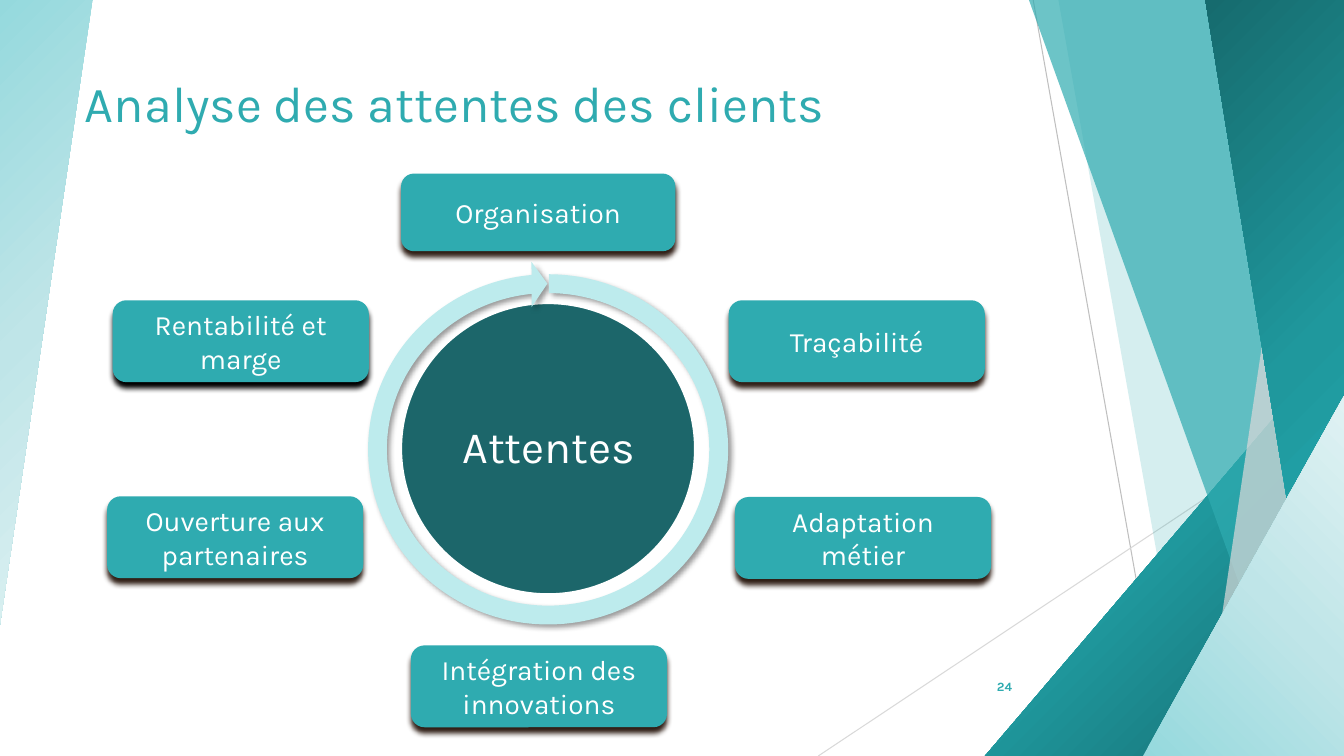
from lxml import etree
from pptx import Presentation
from pptx.dml.color import RGBColor
from pptx.enum.shapes import MSO_CONNECTOR, MSO_SHAPE
from pptx.enum.text import MSO_ANCHOR, PP_ALIGN
from pptx.oxml.ns import qn
from pptx.util import Pt

TEAL = RGBColor(0x2F, 0xAB, 0xB0)
DEEP_TEAL = RGBColor(0x1C, 0x66, 0x6A)
PALE_TEAL = RGBColor(0xBD, 0xEB, 0xED)
WARM_GREY = RGBColor(0xDC, 0xD9, 0xD9)
MID_GREY = RGBColor(0xBF, 0xBF, 0xBF)
LIGHT_GREY = RGBColor(0xD9, 0xD9, 0xD9)
WHITE = RGBColor(0xFF, 0xFF, 0xFF)
BROWN = RGBColor(0x32, 0x21, 0x18)
BLACK = RGBColor(0, 0, 0)
DARK_STOPS = [(0, RGBColor(0x16, 0x6B, 0x6E)), (50, RGBColor(0x1F, 0x98, 0x9D)),
              (100, RGBColor(0x25, 0xB4, 0xBA))]
LIGHT_STOPS = [(0, RGBColor(0x95, 0xD9, 0xDD)), (50, RGBColor(0xBF, 0xE5, 0xE8)),
               (100, RGBColor(0xE0, 0xF2, 0xF3))]

FONT = "Karla"
W, H = 960, 540
LEFT, CENTER, RIGHT = PP_ALIGN.LEFT, PP_ALIGN.CENTER, PP_ALIGN.RIGHT
TOP, MIDDLE = MSO_ANCHOR.TOP, MSO_ANCHOR.MIDDLE
ROUNDED, OVAL, BOX = MSO_SHAPE.ROUNDED_RECTANGLE, MSO_SHAPE.OVAL, MSO_SHAPE.RECTANGLE
TRIANGLE, RING = MSO_SHAPE.RIGHT_TRIANGLE, MSO_SHAPE.CIRCULAR_ARROW
TRIANGLE = MSO_SHAPE.ISOSCELES_TRIANGLE
STRAIGHT = MSO_CONNECTOR.STRAIGHT

TITLE = "Analyse des attentes des clients"
NUMBER = "24"
HUB = "Attentes"
# text, left, top, width, height, shadow colour
EXPECTATIONS = [
    ("Organisation", 286.5, 124, 196, 55.5, BROWN),
    ("Traçabilité", 520.5, 214.5, 183, 58.5, BROWN),
    ("Adaptation métier", 525, 355, 183, 58.5, BROWN),
    ("Intégration des innovations", 293.5, 461, 183, 58.5, BROWN),
    ("Ouverture aux partenaires", 76.5, 354.5, 183, 58.5, BROWN),
    ("Rentabilité et marge", 80.5, 214.5, 183, 58.5, BLACK),
]
# from x, from y, to x, to y, colour
THIN_LINES = [(738, 0, 834, H, MID_GREY), (W, 290, 584.5, H, LIGHT_GREY)]
# Panels run from a slanted left side (top x, bottom x) to the right slide edge;
# triangles are boxes with a rotation. Solid fill: colour, opacity.
# Gradient fill: stops, then an angle or the corner (l, t, r, b) it spreads from.
FACETS = [
    ("panel", (756, 852), (TEAL, 20)),
    ("triangle", (703.5, 240, 256.5, 300, 0), (DARK_STOPS, (100, 100, 0, 0))),
    ("panel", (735, 929.5), (TEAL, 70)),
    ("panel", (938, 858), (WARM_GREY, 70)),
    ("panel", (861, 949), (DARK_STOPS, (0, 0, 100, 100))),
    ("triangle", (816.5, 283, 143.5, 257, 0), (LIGHT_STOPS, 315)),
    ("triangle", (0, 0, 66, 446, 180), (LIGHT_STOPS, 225)),
]


def sub(parent, tag, **attrs):
    return etree.SubElement(parent, qn(tag), {k: str(v) for k, v in attrs.items()})


def paint(sp, color, opacity=100):
    """Flat fill without outline or shadow."""
    sp.shadow.inherit = False
    sp.fill.solid()
    sp.fill.fore_color.rgb = color
    sp.line.fill.background()
    if opacity < 100:
        rgb = sp.fill._xPr.find(qn("a:solidFill"))[0]
        sub(rgb, "a:alpha", val=opacity * 1000)


def paint_gradient(sp, stops, spread):
    paint(sp, stops[0][1])
    props = sp.element.spPr
    grad = etree.Element(qn("a:gradFill"), rotWithShape="1")
    stop_list = sub(grad, "a:gsLst")
    for pos, color in stops:
        sub(sub(stop_list, "a:gs", pos=pos * 1000), "a:srgbClr", val=color)
    if isinstance(spread, tuple):
        corner = {side: v * 1000 for side, v in zip("ltrb", spread)}
        sub(sub(grad, "a:path", path="circle"), "a:fillToRect", **corner)
    else:
        sub(grad, "a:lin", ang=spread * 60000, scaled=0)
    props.replace(props.find(qn("a:solidFill")), grad)


def cast_shadow(sp, color, opacity, blur, dist, angle):
    effects = sp.element.spPr.find(qn("a:effectLst"))
    outer = sub(effects, "a:outerShdw", blurRad=Pt(blur), dist=Pt(dist),
                dir=angle * 60000, rotWithShape=0)
    sub(sub(outer, "a:srgbClr", val=color), "a:alpha", val=opacity * 1000)


def write(sp, text, size, color, align=CENTER, anchor=MIDDLE, bold=False):
    tf = sp.text_frame
    tf.word_wrap = True
    tf.vertical_anchor = anchor
    p = tf.paragraphs[0]
    p.alignment = align
    r = p.add_run()
    r.text = text
    r.font.name, r.font.size, r.font.bold = FONT, Pt(size), bold
    r.font.color.rgb = color
    return tf


def add_shape(s, kind, x, y, w, h, color):
    sp = s.shapes.add_shape(kind, Pt(x), Pt(y), Pt(w), Pt(h))
    paint(sp, color)
    return sp


def add_facets(s):
    for x1, y1, x2, y2, color in THIN_LINES:
        line = s.shapes.add_connector(STRAIGHT, Pt(x1), Pt(y1), Pt(x2), Pt(y2))
        line.line.color.rgb = color
        line.line.width = Pt(0.75)
        sub(line.element.spPr, "a:effectLst")
    for kind, geometry, (fill, extra) in FACETS:
        if kind == "panel":
            top_x, bottom_x = geometry
            outline = s.shapes.build_freeform(Pt(top_x), 0)
            corners = [(W, 0), (W, H), (bottom_x, H)]
            outline.add_line_segments([(Pt(x), Pt(y)) for x, y in corners])
            sp = outline.convert_to_shape()
        else:
            *box, rotation = geometry
            sp = add_shape(s, TRIANGLE, *box, TEAL)
            sp.adjustments[0] = 1
            sp.rotation = rotation
        if isinstance(fill, list):
            paint_gradient(sp, fill, extra)
        else:
            paint(sp, fill, extra)


def add_hub(s):
    disc = add_shape(s, OVAL, 286.5, 216.5, 210, 208, DEEP_TEAL)
    disc.line.color.rgb = WHITE
    disc.line.width = Pt(1.5)
    label = add_shape(s, BOX, 320.5, 251.5, 143, 139, DEEP_TEAL)
    tf = write(label, HUB, 32, WHITE)
    tf.margin_left = tf.margin_right = tf.margin_top = tf.margin_bottom = Pt(4)
    tf.paragraphs[0].line_spacing = 0.9
    ring = add_shape(s, RING, 253.5, 186.5, 276, 269, PALE_TEAL)
    for i, value in enumerate((0.05, 3.28, 158.57, 162.16, 0.06)):
        ring.adjustments[i] = value
    cast_shadow(ring, BLACK, 40, 4, 3, 45)


def main():
    prs = Presentation()
    prs.slide_width, prs.slide_height = Pt(W), Pt(H)
    s = prs.slides.add_slide(prs.slide_layouts[5])
    add_facets(s)

    title = s.shapes.title
    title.left, title.top, title.width, title.height = Pt(53.5), Pt(48), Pt(677), Pt(104)
    write(title, TITLE, 36, TEAL, LEFT, TOP)
    number = s.shapes.add_textbox(Pt(676), Pt(476), Pt(54), Pt(29))
    write(number, NUMBER, 9, TEAL, RIGHT, bold=True)

    add_hub(s)
    for text, x, y, w, h, shadow in EXPECTATIONS:
        sp = add_shape(s, ROUNDED, x, y, w, h, TEAL)
        write(sp, text, 20, WHITE)
        cast_shadow(sp, shadow, 100, 4, 4, 90)
    prs.save("out.pptx")


if __name__ == "__main__":
    main()
